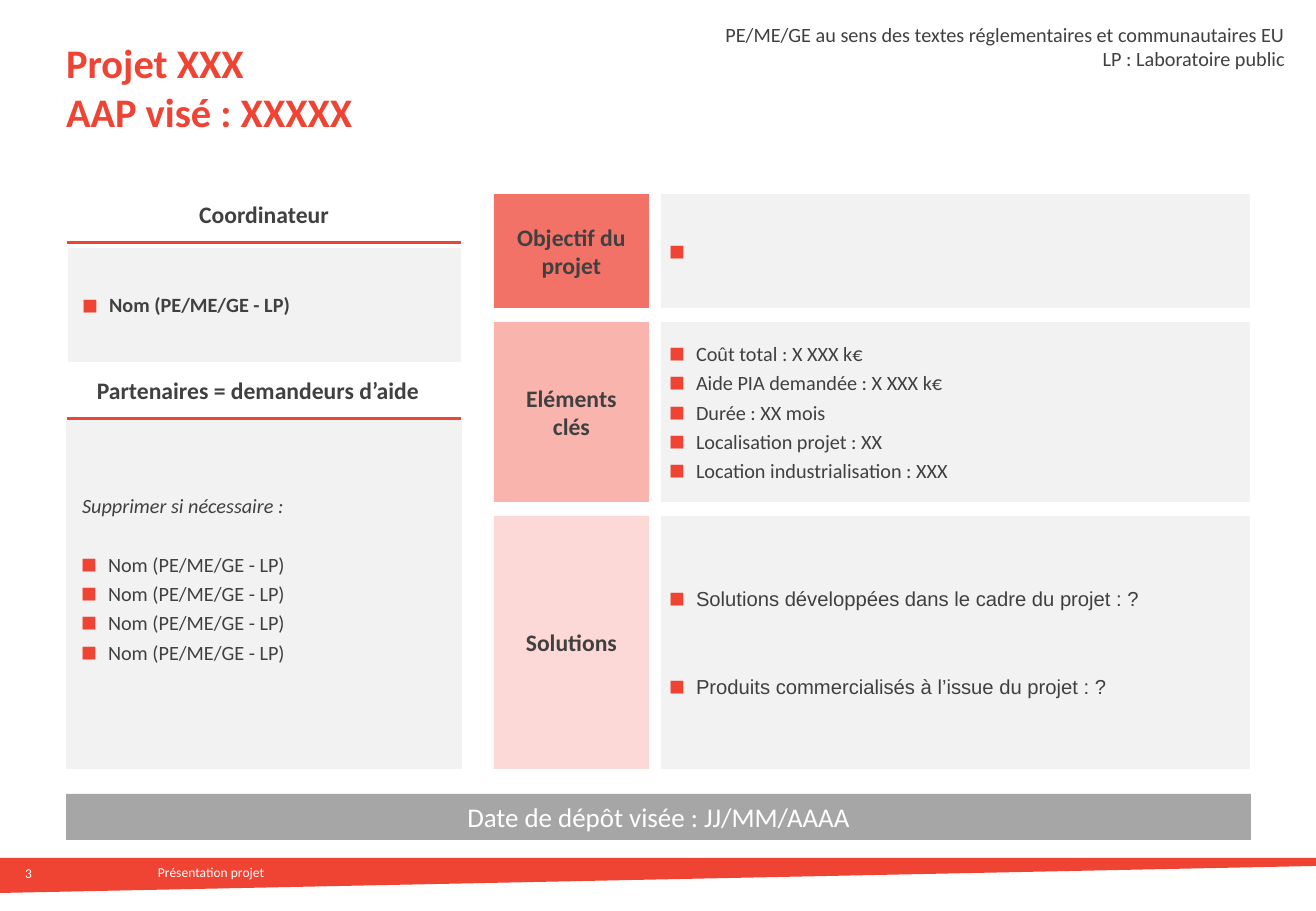
from lxml import etree
from pptx import Presentation, util as u
from pptx.dml.color import RGBColor
from pptx.enum import shapes, text
from pptx.oxml.ns import qn

RED, GREY, DARK, WHITE, SILVER = "EF4333", "F2F2F2", "404040", "FFFFFF", "A6A6A6"
PX = 914400 / 121.5
LEFT, CENTER, RIGHT = text.PP_ALIGN.LEFT, text.PP_ALIGN.CENTER, text.PP_ALIGN.RIGHT

# Content
TITLE = "Projet XXX\vAAP visé : XXXXX"
DEFINITIONS = ["PE/ME/GE au sens des textes réglementaires et communautaires EU",
               "LP : Laboratoire public"]
COORDINATOR = "Nom (PE/ME/GE - LP)"
PARTNERS = ["Supprimer si nécessaire :"] + ["Nom (PE/ME/GE - LP)"] * 4
# heading, top, right inset
HEADINGS = [("Coordinateur", 187, 12), ("Partenaires = demandeurs d’aide", 363, 24)]
# label, label colour, height, body font, space between items (pt), items
ROWS = [
    ("Objectif du projet", "F27268", 114, "Calibri", 0, [" "]),
    ("Eléments\vclés", "F9B4AD", 180, "Calibri", 0,
     ["Coût total : X XXX k€", "Aide PIA demandée : X XXX k€", "Durée : XX mois",
      "Localisation projet : XX", "Location industrialisation : XXX"]),
    ("Solutions", "FCD9D6", 253, "Arial", 35,
     ["Solutions développées dans le cadre du projet : ?",
      "Produits commercialisés à l’issue du projet : ?"]),
]
DEADLINE = "Date de dépôt visée : JJ/MM/AAAA"
# text, box, alignment
FOOTER = [("Présentation projet", (158, 864, 140, 16), LEFT),
          ("3", (7, 865, 25, 16), RIGHT)]

# Layout in px
MARGIN, COLUMN, FULL = 66, 396, 1185
LABEL_X, LABEL_W, BODY_X, BODY_W = 494, 155, 661, 589
ROWS_TOP, ROW_GAP = 194, 14


def px(value):
    return u.Emu(round(value * PX))


def color(value):
    return RGBColor.from_string(value)


def apply(target, values):
    for name, value in values.items():
        setattr(target, name, value)


def add_bullet(para):
    props = para._p.get_or_add_pPr()
    props.set("marL", str(px(30)))
    props.set("indent", str(px(-27)))
    tint = etree.SubElement(props, qn("a:buClr"))
    etree.SubElement(tint, qn("a:srgbClr"), val=RED)
    etree.SubElement(props, qn("a:buSzPct"), val="130000")
    etree.SubElement(props, qn("a:buFont"), typeface="Arial")
    etree.SubElement(props, qn("a:buChar"), char="■")


def write(frame, lines, size=12, tint=DARK, align=LEFT, bullet=False, after=0,
          insets=(12, 6, 12, 6), anchor=text.MSO_ANCHOR.MIDDLE, **font):
    sides = ("margin_left", "margin_top", "margin_right", "margin_bottom")
    apply(frame, dict(zip(sides, map(px, insets)), word_wrap=True,
                      auto_size=text.MSO_AUTO_SIZE.NONE, vertical_anchor=anchor))
    style = {"name": "Calibri", "size": u.Pt(size), **font}
    for index, line in enumerate(lines):
        para = frame.add_paragraph() if index else frame.paragraphs[0]
        para.text = line
        if bullet:
            add_bullet(para)
        apply(para, {"alignment": align, "space_after": u.Pt(after)})
        for span in para.runs:
            apply(span.font, style)
            span.font.color.rgb = color(tint)
    return frame.paragraphs


def place(page, box):
    return page.shapes.add_textbox(*map(px, box)).text_frame


def add_block(page, box, fill):
    block = page.shapes.add_shape(shapes.MSO_SHAPE.RECTANGLE, *map(px, box))
    block.shadow.inherit = False
    block.fill.solid()
    block.fill.fore_color.rgb = color(fill)
    block.line.fill.background()
    return block.text_frame


def add_footer(page):
    builder = page.shapes.build_freeform(0, 858, scale=PX)
    builder.add_line_segments([(1316, 858), (1316, 866), (0, 893)])
    band = builder.convert_to_shape()
    band.shadow.inherit = False
    band.fill.solid()
    band.fill.fore_color.rgb = color(RED)
    band.line.fill.background()
    for label, box, align in FOOTER:
        write(place(page, box), [label], 8, WHITE, align, insets=(0, 0, 0, 0))


def add_heading(page, label, top, right_inset):
    write(add_block(page, (MARGIN, top, COLUMN, 53), WHITE), [label], 14, align=CENTER,
          insets=(12, 12, right_inset, 12), anchor=text.MSO_ANCHOR.BOTTOM, bold=True)
    y = px(top + 55.5)
    rule = page.shapes.add_connector(shapes.MSO_CONNECTOR.STRAIGHT, px(MARGIN + 1), y,
                                     px(MARGIN + COLUMN - 1), y)
    rule.line.color.rgb = color(RED)
    rule.line.width = u.Pt(2)
    etree.SubElement(rule._element.spPr, qn("a:effectLst"))


def add_coordinator(page):
    table = page.shapes.add_table(1, 1, *map(px, (67, 247, 395, 117))).table
    apply(table, {"first_row": False, "horz_banding": False})
    cell = table.cell(0, 0)
    border = etree.SubElement(cell._tc.get_or_add_tcPr(), qn("a:lnB"), w=str(u.Pt(3)))
    fill = etree.SubElement(border, qn("a:solidFill"))
    etree.SubElement(fill, qn("a:srgbClr"), val=WHITE)
    cell.fill.solid()
    cell.fill.fore_color.rgb = color(GREY)
    cell.vertical_anchor = text.MSO_ANCHOR.MIDDLE
    para = cell.text_frame.paragraphs[0]
    add_bullet(para)
    para.space_after = u.Pt(3)
    span = para.add_run()
    span.text = COORDINATOR
    apply(span.font, {"name": "Calibri", "size": u.Pt(12), "bold": True})
    span.font.color.rgb = color(DARK)


def add_partners(page):
    frame = add_block(page, (MARGIN, 417, COLUMN, 352), GREY)
    paras = write(frame, PARTNERS, bullet=True, after=3, insets=(12, 6, 12, 35))
    # The instruction line is plain italic, set apart from the names
    props = paras[0]._p.pPr
    for child in props.xpath("a:buClr | a:buSzPct | a:buFont | a:buChar"):
        props.remove(child)
    apply(paras[0].runs[0].font, {"italic": True})
    props.set("marL", str(px(4)))
    props.set("indent", "0")
    paras[1].space_before = u.Pt(17.5)


def add_rows(page):
    top = ROWS_TOP
    for label, fill, height, font, gap, items in ROWS:
        write(add_block(page, (LABEL_X, top, LABEL_W, height), fill), [label], 14,
              align=CENTER, insets=(0, 0, 0, 0), bold=True)
        paras = write(add_block(page, (BODY_X, top, BODY_W, height), GREY), items,
                      bullet=True, after=3, insets=(5, 5, 5, 5), name=font)
        for para in paras[1:]:
            para.space_before = u.Pt(gap)
        top += height + ROW_GAP


def main():
    deck = Presentation()
    apply(deck, {"slide_width": px(1316), "slide_height": px(911)})
    page = deck.slides.add_slide(deck.slide_layouts[5])

    # Title and definitions
    title = page.shapes.title
    apply(title, dict(zip(("left", "top", "width", "height"),
                          map(px, (MARGIN, 36, FULL, 102)))))
    write(title.text_frame, [TITLE], 24, RED, insets=(0, 6, 0, 6), bold=True)
    write(place(page, (704, 16, 593, 61)), DEFINITIONS, align=RIGHT,
          anchor=text.MSO_ANCHOR.TOP)

    # Left column
    add_coordinator(page)
    add_partners(page)
    for heading in HEADINGS:
        add_heading(page, *heading)

    # Right column, deadline and footer
    add_rows(page)
    write(add_block(page, (MARGIN, 794, FULL, 46), SILVER), [DEADLINE], 16, WHITE, CENTER)
    add_footer(page)
    deck.save("out.pptx")


if __name__ == "__main__":
    main()
